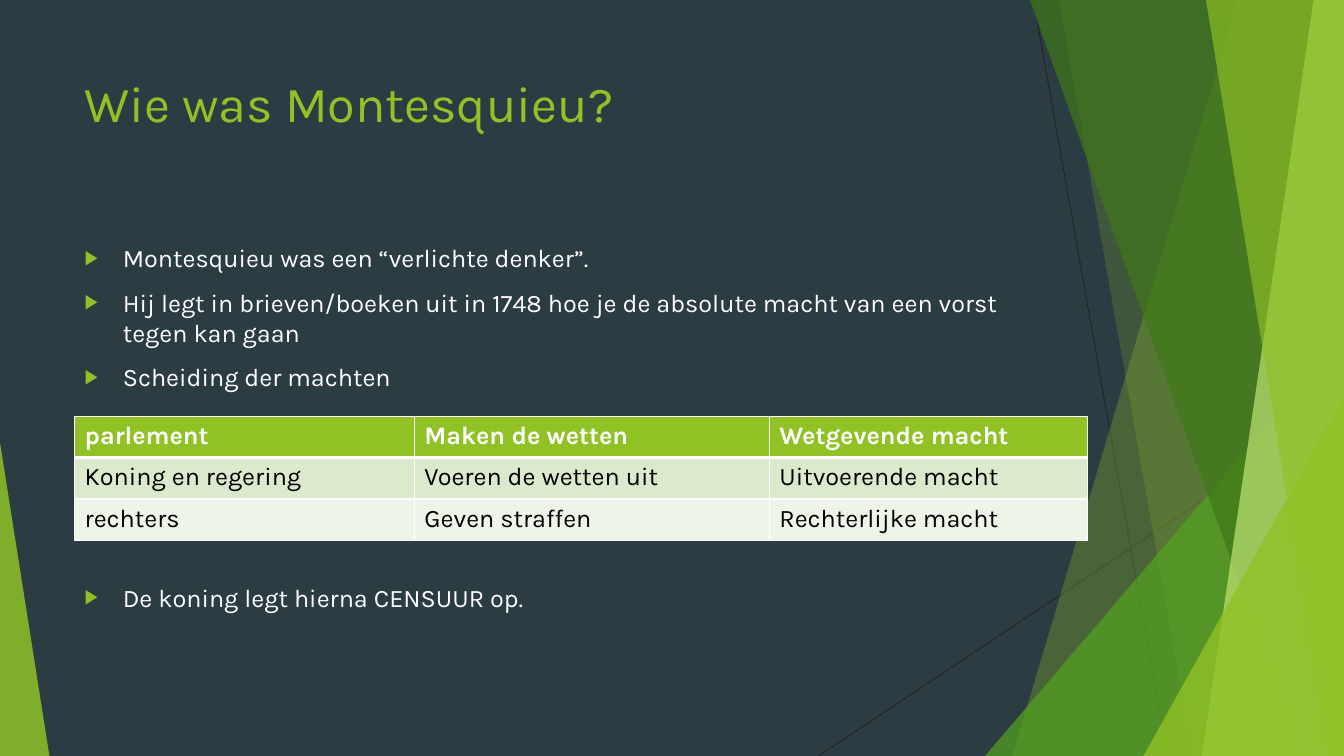
from dataclasses import dataclass

from lxml.etree import SubElement
from pptx import Presentation
from pptx.dml.color import RGBColor
from pptx.enum.shapes import MSO_CONNECTOR, MSO_SHAPE
from pptx.enum.text import MSO_ANCHOR
from pptx.oxml.ns import qn
from pptx.util import Emu, Pt

PX = 9144


@dataclass(frozen=True)
class Theme:
    font: str = "Karla"
    title_size: int = 36
    body_size: int = 18
    background: str = "2C3C43"
    accent: str = "90C226"
    green: str = "54A021"
    forest: str = "3F7819"
    lime: str = "C0E474"
    hairline: str = "262626"
    white: str = "FFFFFF"
    black: str = "000000"
    bands: tuple = ("DBE9CD", "EEF4E8")


THEME = Theme()

RAYS = [(10, 0, 1158, 750), (1333, 403, 812, 750)]
RAYS[0] = (1025, 0, 1158, 750)
BULLETS = [
    ("Montesquieu was een “verlichte denker”.", 10),
    ("Hij legt in brieven/boeken uit in 1748 hoe je de absolute macht "
     "van een vorst tegen kan gaan", 10),
    ("Scheiding der machten", 10),
    ("De koning legt hierna CENSUUR op.", 136),
]
ROLES = [
    ("parlement", "Maken de wetten"),
    ("Koning en regering", "Voeren de wetten uit"),
    ("rechters", "Geven straffen"),
]
POWERS = [("Wetgevende macht",), ("Uitvoerende macht",), ("Rechterlijke macht",)]


def px(*lengths):
    return [Emu(n * PX) for n in lengths]


def rgb(color):
    return RGBColor.from_string(color)


def paint(sp, color, opacity):
    sp.shadow.inherit = False
    sp.line.fill.background()
    sp.fill.solid()
    sp.fill.fore_color.rgb = rgb(color)
    clr = sp.fill._xPr.find(qn("a:solidFill"))[0]
    SubElement(clr, qn("a:alpha"), val=str(opacity * 1000))


def add_ray(s, ends):
    line = s.shapes.add_connector(MSO_CONNECTOR.STRAIGHT, *px(*ends))
    line.line.color.rgb = rgb(THEME.hairline)
    line.line.width = Pt(0.75)
    SubElement(line._element.spPr, qn("a:effectLst"))


def add_shard(s, top_x, bottom_x, color, opacity):
    fb = s.shapes.build_freeform(top_x, -1, scale=PX)
    fb.add_line_segments([(1333, -1), (1333, 750), (bottom_x, 750)], close=True)
    paint(fb.convert_to_shape(), color, opacity)


def add_corner(s, box, apex, color, opacity):
    sp = s.shapes.add_shape(MSO_SHAPE.ISOSCELES_TRIANGLE, *px(*box))
    sp.adjustments[0] = apex
    paint(sp, color, opacity)


def style_text(p, size, color, bold=False):
    for r in p.runs:
        r.font.name = THEME.font
        r.font.size = Pt(size)
        r.font.bold = bold
        r.font.color.rgb = rgb(color)


def add_text_frame(s, box):
    tf = s.shapes.add_textbox(*px(*box)).text_frame
    tf.word_wrap = True
    tf.vertical_anchor = MSO_ANCHOR.TOP
    return tf


def add_title(s, text):
    p = add_text_frame(s, (74, 67, 940, 144)).paragraphs[0]
    p.text = text
    style_text(p, THEME.title_size, THEME.accent)


def add_bullets(s, items):
    tf = add_text_frame(s, (74, 236, 940, 424))
    for i, (text, gap) in enumerate(items):
        p = tf.add_paragraph() if i else tf.paragraphs[0]
        p.text = text
        p.space_before = Pt(gap)
        style_text(p, THEME.body_size, THEME.white)
        pPr = p._p.get_or_add_pPr()
        pPr.set("marL", str(38 * PX))
        pPr.set("indent", str(-38 * PX))
        SubElement(SubElement(pPr, qn("a:buClr")), qn("a:srgbClr"), val=THEME.accent)
        SubElement(pPr, qn("a:buSzPct"), val="80000")
        SubElement(pPr, qn("a:buFont"), typeface="Wingdings 3")
        pPr[-1].set("typeface", THEME.font)
        SubElement(pPr, qn("a:buChar"), char="▶")


def set_borders(cell, top, bottom):
    tcPr = cell._tc.get_or_add_tcPr()
    for side, width in (("L", 1), ("R", 1), ("T", top), ("B", bottom)):
        ln = SubElement(tcPr, qn("a:ln" + side), w=str(Pt(width)))
        SubElement(SubElement(ln, qn("a:solidFill")), qn("a:srgbClr"), val=THEME.white)


def add_grid(s, left, widths, rows):
    top, row_height = 413, 41
    box = px(left, top, sum(widths), row_height * len(rows))
    table = s.shapes.add_table(len(rows), len(widths), *box).table
    for column, width in zip(table.columns, px(*widths)):
        column.width = width
    fills = (THEME.accent, *THEME.bands)
    for i, (row, fill) in enumerate(zip(rows, fills)):
        header = i == 0
        table.rows[i].height = Emu(row_height * PX)
        for j, text in enumerate(row):
            cell = table.cell(i, j)
            set_borders(cell, 3 if i == 1 else 1, 3 if header else 1)
            cell.fill.solid()
            cell.fill.fore_color.rgb = rgb(fill)
            p = cell.text_frame.paragraphs[0]
            p.text = text
            style_text(p, THEME.body_size, THEME.white if header else THEME.black, header)


def add_backdrop(s):
    s.background.fill.solid()
    s.background.fill.fore_color.rgb = rgb(THEME.background)
    for ends in RAYS:
        add_ray(s, ends)
    add_shard(s, 1228, 1004, THEME.accent, 30)
    add_shard(s, 1050, 1183, THEME.accent, 20)
    add_corner(s, (977, 333, 356, 417), 1, THEME.green, 72)
    add_shard(s, 1021, 1291, THEME.forest, 70)
    add_shard(s, 1303, 1192, THEME.lime, 70)
    add_shard(s, 1196, 1318, THEME.accent, 65)
    add_corner(s, (1134, 393, 199, 357), 1, THEME.accent, 80)
    add_corner(s, (0, 439, 49, 311), 0, THEME.accent, 85)


def main():
    prs = Presentation()
    prs.slide_width, prs.slide_height = px(1333, 750)
    s = prs.slides.add_slide(prs.slide_layouts[6])
    add_backdrop(s)
    add_title(s, "Wie was Montesquieu?")
    add_bullets(s, BULLETS)
    add_grid(s, 74, (337, 352), ROLES)
    add_grid(s, 763, (316,), POWERS)
    prs.save("out.pptx")


if __name__ == "__main__":
    main()
